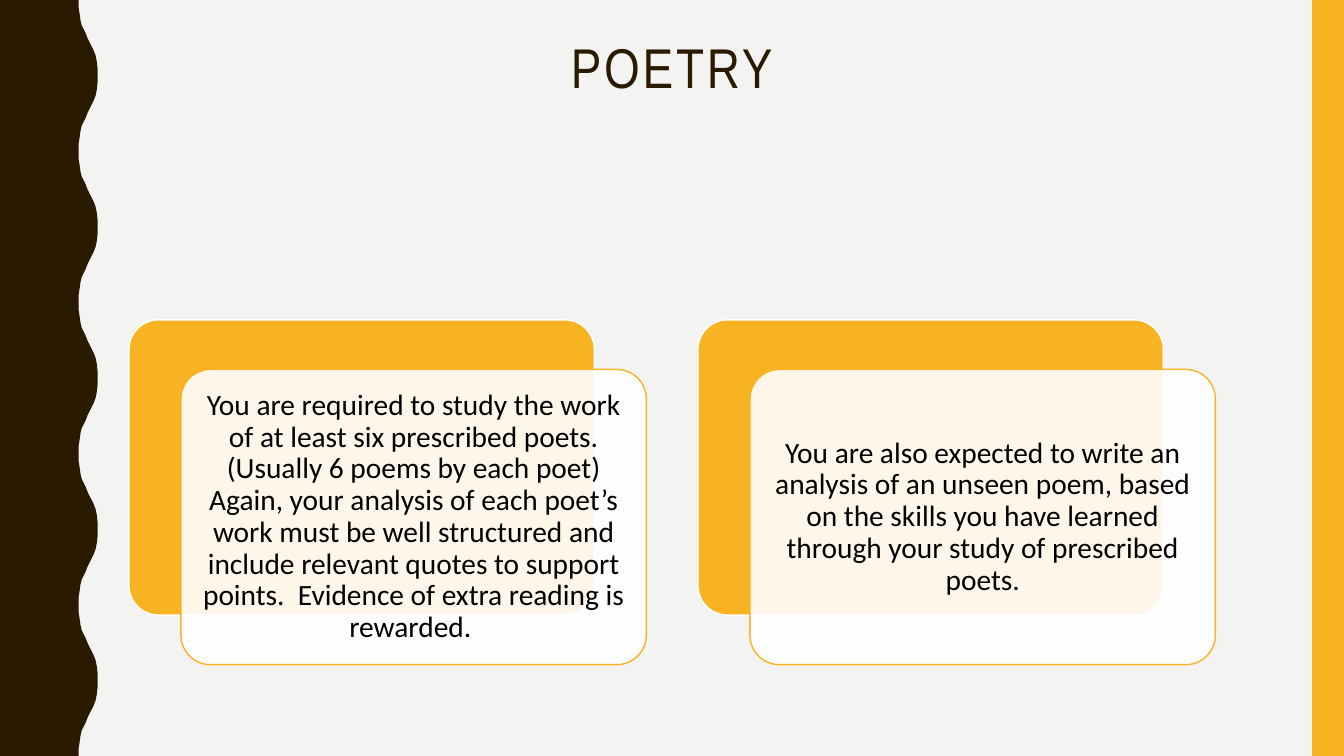
from dataclasses import dataclass

from lxml.etree import SubElement
from pptx import Presentation
from pptx.dml.color import RGBColor
from pptx.enum.shapes import MSO_SHAPE
from pptx.enum.text import MSO_ANCHOR, MSO_AUTO_SIZE, PP_ALIGN
from pptx.oxml.ns import qn
from pptx.shapes.autoshape import Shape
from pptx.shapes.shapetree import GroupShapes, SlideShapes
from pptx.text.text import TextFrame
from pptx.util import Cm, Pt

WIDE, HIGH = 33.87, 19.05
BROWN, GOLD, WHITE = "2A1A00", "F8B323", "FFFFFF"

# Half of one wave, as (x, y) in cm; the other half mirrors it
PERIOD, WAVES = 3.81, 5
CURVE = [(1.98, 0), (1.98, 0.18), (2.01, 0.36), (2.03, 0.51), (2.06, 0.64),
         (2.11, 0.74), (2.16, 0.84), (2.21, 0.97), (2.26, 1.07), (2.31, 1.17),
         (2.36, 1.27), (2.41, 1.4), (2.44, 1.55), (2.46, 1.73), (2.46, 1.9)]


@dataclass
class Box:
    left: float
    top: float
    width: float
    height: float

    def cm(self) -> tuple[Cm, Cm, Cm, Cm]:
        return Cm(self.left), Cm(self.top), Cm(self.width), Cm(self.height)

    def shift(self, right: float, down: float) -> "Box":
        return Box(self.left + right, self.top + down, self.width, self.height)

    def inset(self, gap: float) -> "Box":
        return Box(self.left + gap, self.top + gap,
                   self.width - 2 * gap, self.height - 2 * gap)


@dataclass
class Card:
    back: Box
    text: str


FIRST = Box(3.25, 8.06, 11.73, 7.44)
CARDS = [
    Card(FIRST, "You are required to study the work of at least six prescribed "
         "poets. (Usually 6 poems by each poet) Again, your analysis of each "
         "poet’s work must be well structured and include relevant quotes to "
         "support points.  Evidence of extra reading is rewarded. "),
    Card(FIRST.shift(14.34, 0), "You are also expected to write an analysis of an "
         "unseen poem, based on the skills you have learned through your study "
         "of prescribed poets."),
]


def color(code: str) -> RGBColor:
    return RGBColor.from_string(code)


def paint(shape: Shape, fill: str, line: str | None = None) -> None:
    shape.shadow.inherit = False
    shape.fill.solid()
    shape.fill.fore_color.rgb = color(fill)
    if line:
        shape.line.color.rgb = color(line)
        shape.line.width = Pt(1)
    else:
        shape.line.fill.background()


def write(frame: TextFrame, text: str, font: str, size: int, ink: str,
          anchor: MSO_ANCHOR) -> None:
    frame.text = text
    frame.word_wrap = True
    frame.auto_size = MSO_AUTO_SIZE.NONE
    frame.vertical_anchor = anchor
    para = frame.paragraphs[0]
    para.alignment = PP_ALIGN.CENTER
    para.line_spacing = 0.9
    para.font.name = font
    para.font.size = Pt(size)
    para.font.color.rgb = color(ink)


def panel(shapes: GroupShapes, box: Box, fill: str, line: str) -> Shape:
    shape = shapes.add_shape(MSO_SHAPE.ROUNDED_RECTANGLE, *box.cm())
    shape.adjustments[0] = 0.1
    paint(shape, fill, line)
    return shape


def draw_card(shapes: GroupShapes, card: Card) -> None:
    panel(shapes, card.back, GOLD, WHITE)
    front = card.back.shift(1.31, 1.25)
    sheet = panel(shapes, front, WHITE, GOLD)
    tint = sheet.element.spPr.find(".//" + qn("a:srgbClr"))
    SubElement(tint, qn("a:alpha"), val="90000")

    label = shapes.add_textbox(*front.inset(0.22).cm())
    frame = label.text_frame
    frame.margin_left = frame.margin_right = Cm(0.23)
    frame.margin_top = frame.margin_bottom = Cm(0.23)
    write(frame, card.text, "Calibri", 21, "000000", MSO_ANCHOR.MIDDLE)


def draw_wave(shapes: SlideShapes) -> None:
    cycle = CURVE + [(x, PERIOD - y) for x, y in reversed(CURVE[:-1])]
    edge = [(x, y + turn * PERIOD) for turn in range(WAVES) for x, y in cycle]
    points = [(Cm(x), Cm(y)) for x, y in edge + [(0, HIGH)]]
    pen = shapes.build_freeform(0, 0)
    pen.add_line_segments(points, close=True)
    paint(pen.convert_to_shape(), BROWN)


def main() -> None:
    deck = Presentation()
    deck.slide_width, deck.slide_height = Cm(WIDE), Cm(HIGH)
    slide = deck.slides.add_slide(deck.slide_layouts[5])
    slide.background.fill.solid()
    slide.background.fill.fore_color.rgb = color("F3F3F2")

    # Side bands
    draw_wave(slide.shapes)
    band = Box(33.07, 0, 0.8, HIGH)
    paint(slide.shapes.add_shape(MSO_SHAPE.RECTANGLE, *band.cm()), GOLD)

    # Title
    title = slide.shapes.title
    title.left, title.top, title.width, title.height = Box(3.28, 0.89, 27.3, 3.68).cm()
    write(title.text_frame, "POETRY", "Arial Narrow", 40, BROWN, MSO_ANCHOR.TOP)
    title.text_frame.paragraphs[0].runs[0].font._element.set("spc", "200")

    # Cards
    group = slide.shapes.add_group_shape()
    for card in CARDS:
        draw_card(group.shapes, card)

    deck.save("out.pptx")


if __name__ == "__main__":
    main()
